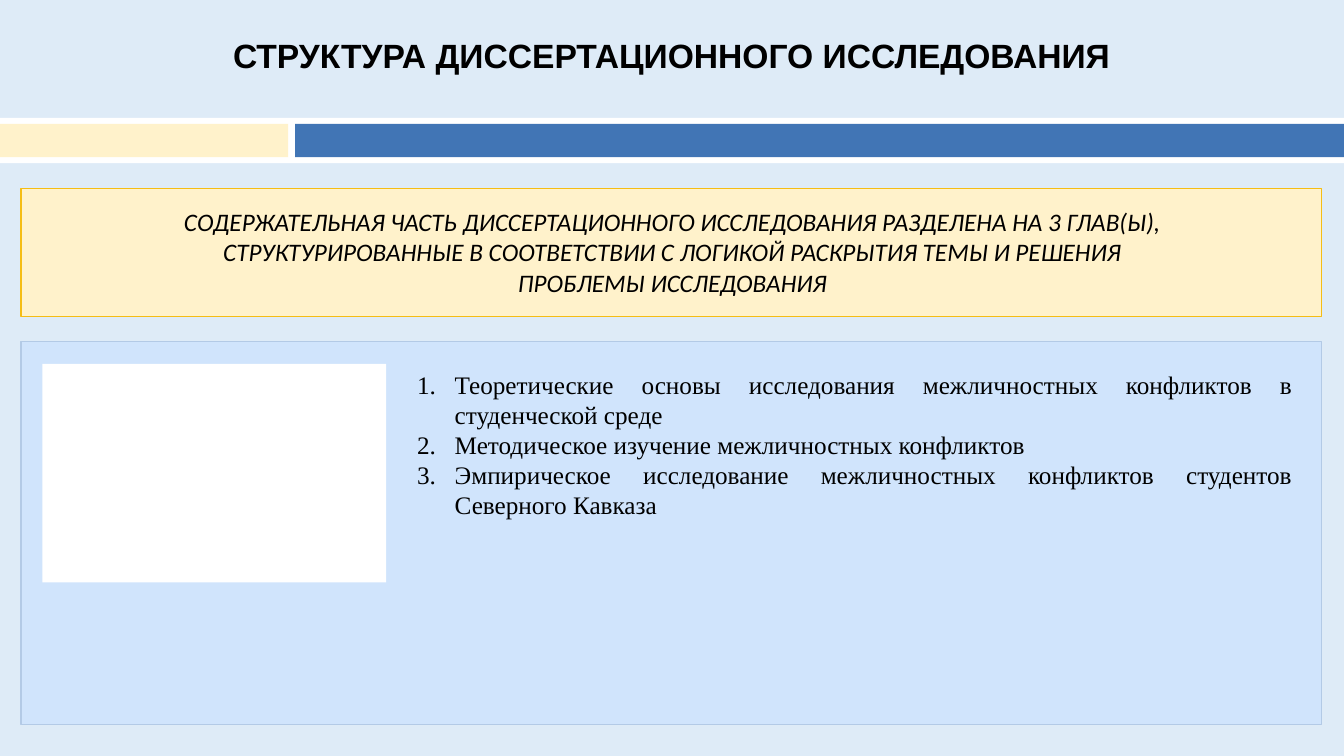
from lxml import etree
from pptx import Presentation
from pptx.dml.color import RGBColor
from pptx.enum.shapes import MSO_SHAPE
from pptx.enum.text import MSO_AUTO_SIZE, PP_ALIGN
from pptx.oxml.ns import qn
from pptx.util import Cm, Pt

BACKGROUND = RGBColor(0xDE, 0xEB, 0xF7)
WHITE = RGBColor(0xFF, 0xFF, 0xFF)
BLACK = RGBColor(0, 0, 0)
BLUE = RGBColor(0x41, 0x75, 0xB5)
CREAM = RGBColor(0xFF, 0xF2, 0xCB)
GOLD = RGBColor(0xF5, 0xBD, 0x14)
PALE_BLUE = RGBColor(0xD0, 0xE4, 0xFC)
PALE_BORDER = RGBColor(0xB3, 0xCA, 0xE6)

TITLE = ["СТРУКТУРА ДИССЕРТАЦИОННОГО ИССЛЕДОВАНИЯ"]
SUMMARY = [
    "СОДЕРЖАТЕЛЬНАЯ ЧАСТЬ ДИССЕРТАЦИОННОГО ИССЛЕДОВАНИЯ РАЗДЕЛЕНА НА 3 ГЛАВ(Ы),",
    "СТРУКТУРИРОВАННЫЕ В СООТВЕТСТВИИ С ЛОГИКОЙ РАСКРЫТИЯ ТЕМЫ И РЕШЕНИЯ",
    "ПРОБЛЕМЫ ИССЛЕДОВАНИЯ",
]
CHAPTERS = [
    "Теоретические основы исследования межличностных конфликтов в студенческой среде",
    "Методическое изучение межличностных конфликтов",
    "Эмпирическое исследование межличностных конфликтов студентов Северного Кавказа",
]


def add_rect(slide, left, top, width, height, fill, line=None):
    sp = slide.shapes.add_shape(MSO_SHAPE.RECTANGLE, Cm(left), Cm(top), Cm(width), Cm(height))
    sp.shadow.inherit = False
    sp.fill.solid()
    sp.fill.fore_color.rgb = fill
    if line is None:
        sp.line.fill.background()
    else:
        sp.line.color.rgb = line
        sp.line.width = Pt(1)


def number_paragraph(p):
    pPr = p._p.get_or_add_pPr()
    pPr.set("marL", str(Cm(0.95)))
    pPr.set("indent", str(-Cm(0.95)))
    etree.SubElement(pPr, qn("a:buFont"), typeface="+mj-lt")
    etree.SubElement(pPr, qn("a:buAutoNum"), type="arabicPeriod")


def add_text(slide, left, top, width, height, lines, font, size, align=PP_ALIGN.CENTER,
             bold=False, italic=False, wrap=True, numbered=False):
    tf = slide.shapes.add_textbox(Cm(left), Cm(top), Cm(width), Cm(height)).text_frame
    tf.word_wrap = wrap
    tf.auto_size = MSO_AUTO_SIZE.SHAPE_TO_FIT_TEXT
    tf.text = "\n".join(lines)
    for p in tf.paragraphs:
        p.alignment = align
        if numbered:
            number_paragraph(p)
        for r in p.runs:
            r.font.name = font
            r.font.size = Pt(size)
            r.font.bold = bold
            r.font.italic = italic
            r.font.color.rgb = BLACK


def main():
    prs = Presentation()
    prs.slide_width, prs.slide_height = Cm(33.87), Cm(19.05)
    s = prs.slides.add_slide(prs.slide_layouts[6])
    s.background.fill.solid()
    s.background.fill.fore_color.rgb = BACKGROUND

    # Title
    add_text(s, 5.51, 0.76, 22.83, 1.27, TITLE, "Arial", 24, bold=True, wrap=False)

    # Divider band
    add_rect(s, 0, 2.97, 33.87, 1.14, WHITE)
    add_rect(s, 7.44, 3.12, 26.43, 0.84, BLUE)
    add_rect(s, 0, 3.12, 7.26, 0.84, CREAM)

    # Summary panel
    add_rect(s, 0.53, 4.75, 32.77, 3.23, CREAM, GOLD)
    add_text(s, 1.07, 5.08, 31.75, 2.57, SUMMARY, "Calibri", 18, italic=True)

    # Chapter panel with an empty white field
    add_rect(s, 0.53, 8.61, 32.77, 9.65, PALE_BLUE, PALE_BORDER)
    add_text(s, 10.26, 9.17, 22.56, 5.64, CHAPTERS, "Times New Roman", 18,
             align=PP_ALIGN.JUSTIFY, numbered=True)
    add_rect(s, 1.07, 9.17, 8.66, 5.51, WHITE)

    prs.save("out.pptx")


if __name__ == "__main__":
    main()
